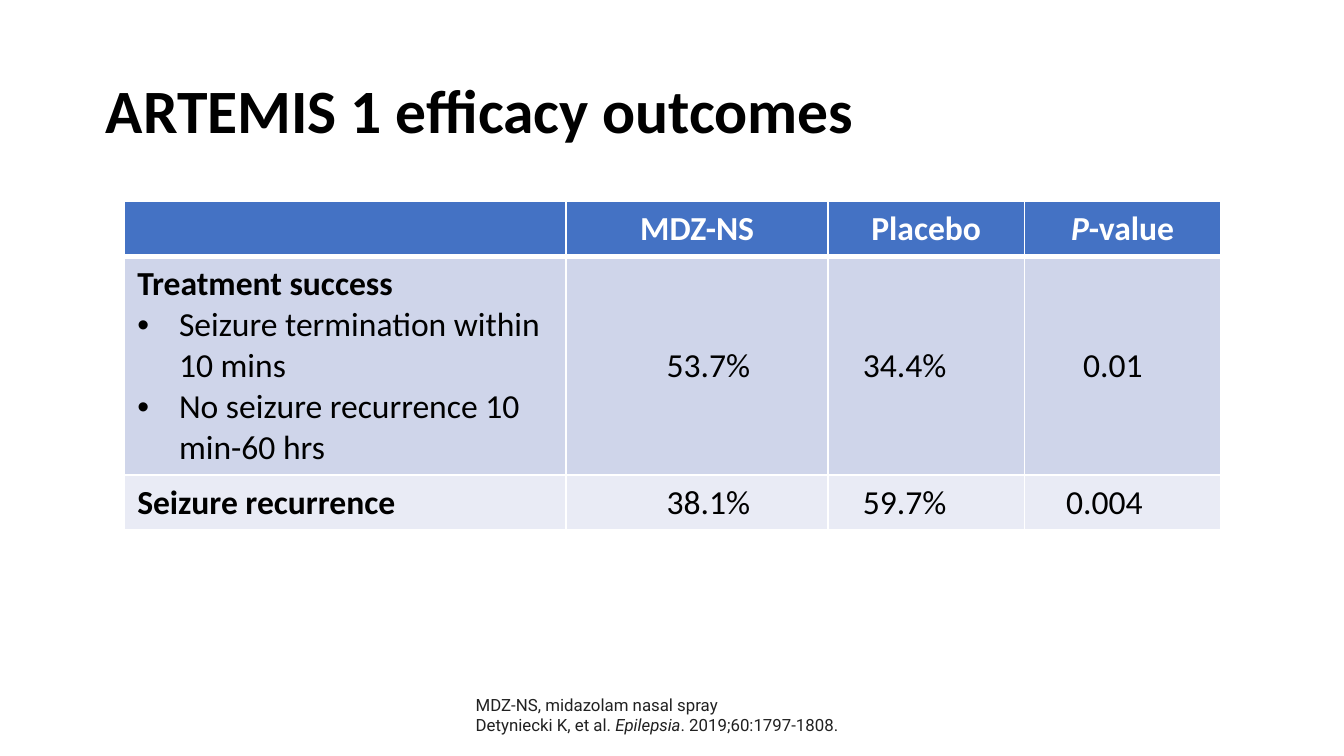
import pptx
import pptx.util
import pptx.dml.color
import pptx.enum.text
import pptx.oxml
import pptx.oxml.ns

Cm = pptx.util.Cm
Pt = pptx.util.Pt
ALIGN = pptx.enum.text.PP_ALIGN
ANCHOR = pptx.enum.text.MSO_ANCHOR

COLORS = {
    "black": "000000", "white": "FFFFFF", "note": "212121",
    "header": "4472C4", "band_dark": "CFD5EA", "band_light": "E9EBF5",
}
PLAIN = {"bold": False}
BOLD = {"bold": True}
ITALIC = {"italic": True}

TITLE = [[("ARTEMIS 1 efficacy outcomes", BOLD)]]
FOOTNOTE = [
    [("MDZ-NS, midazolam nasal spray", {})],
    [("Detyniecki K, et al. ", {}), ("Epilepsia", ITALIC), (". 2019;60:1797-1808.", {})],
]
HEADINGS = [
    [("MDZ-NS", {})],
    [("Placebo", {})],
    [("P", ITALIC), ("-value", {})],
]
OUTCOMES = [
    ("Treatment success",
     ["Seizure termination within 10 mins", "No seizure recurrence 10 min-60 hrs"],
     ["53.7%", "34.4%", "0.01"], "band_dark"),
    ("Seizure recurrence", [], ["38.1%", "59.7%", "0.004"], "band_light"),
]
LABEL_WIDTH = 8.36
VALUE_WIDTHS = [3.73, 2.49, 2.49]
PADDING_WIDTH = 1.22
ROW_HEIGHTS = [1.04, 4.13, 1.04]
BULLET_INDENT = Cm(0.79)


def write(frame, paragraphs, font, color, size, alignment=ALIGN.LEFT, **base):
    for index, runs in enumerate(paragraphs):
        paragraph = frame.paragraphs[0] if index == 0 else frame.add_paragraph()
        paragraph.alignment = alignment
        for text, changes in runs:
            run = paragraph.add_run()
            run.text = text
            run.font.color.rgb = pptx.dml.color.RGBColor.from_string(COLORS[color])
            values = {"name": font, "size": Pt(size), **base, **changes}
            for name, value in values.items():
                setattr(run.font, name, value)


def add_text(slide, box, anchor, paragraphs, **style):
    frame = slide.shapes.add_textbox(*map(Cm, box)).text_frame
    frame.word_wrap = True
    frame.vertical_anchor = anchor
    write(frame, paragraphs, **style)
    return frame


def add_bullet(paragraph):
    properties = paragraph._p.get_or_add_pPr()
    properties.set("marL", str(BULLET_INDENT))
    properties.set("indent", str(-BULLET_INDENT))
    namespace = pptx.oxml.ns.nsdecls("a")
    for xml in (f'<a:buFont {namespace} typeface="Arial"/>', f'<a:buChar {namespace} char="•"/>'):
        properties.append(pptx.oxml.parse_xml(xml))


def style_cell(cell, fill, bottom=1, open_side=None):
    cell.vertical_anchor = ANCHOR.MIDDLE
    cell.fill.solid()
    cell.fill.fore_color.rgb = pptx.dml.color.RGBColor.from_string(COLORS[fill])
    properties = cell._tc.get_or_add_tcPr()
    for index, side in enumerate("LRTB"):
        width = Pt(bottom if side == "B" else 1)
        paint = f'<a:solidFill><a:srgbClr val="{COLORS["white"]}"/></a:solidFill>'
        if side == open_side:
            paint = "<a:noFill/>"
        border = f'<a:ln{side} {pptx.oxml.ns.nsdecls("a")} w="{width}">{paint}</a:ln{side}>'
        properties.insert(index, pptx.oxml.parse_xml(border))


def add_outcome_table(slide):
    widths = [LABEL_WIDTH]
    for width in VALUE_WIDTHS:
        widths += [width, PADDING_WIDTH]
    table = slide.shapes.add_table(
        len(ROW_HEIGHTS), len(widths), Cm(2.34), Cm(3.81),
        Cm(sum(widths)), Cm(sum(ROW_HEIGHTS))).table
    for column, width in zip(table.columns, widths):
        column.width = Cm(width)
    for row, height in zip(table.rows, ROW_HEIGHTS):
        row.height = Cm(height)

    style = {"font": "Calibri", "size": 18}
    for cell in table.rows[0].cells:
        style_cell(cell, "header", bottom=3)
    for index, heading in enumerate(HEADINGS):
        cell = table.cell(0, 1 + 2 * index)
        cell.merge(table.cell(0, 2 + 2 * index))
        write(cell.text_frame, [heading], color="white", alignment=ALIGN.CENTER, bold=True, **style)

    for row, (label, details, values, band) in enumerate(OUTCOMES, start=1):
        cell = table.cell(row, 0)
        style_cell(cell, band)
        paragraphs = [[(label, BOLD)]] + [[(detail, PLAIN)] for detail in details]
        write(cell.text_frame, paragraphs, color="black", **style)
        for paragraph in cell.text_frame.paragraphs[1:]:
            add_bullet(paragraph)
        for index, value in enumerate(values):
            cell = table.cell(row, 1 + 2 * index)
            style_cell(cell, band, open_side="R")
            style_cell(table.cell(row, 2 + 2 * index), band, open_side="L")
            write(cell.text_frame, [[(value, PLAIN)]], color="black", alignment=ALIGN.RIGHT, **style)


def main():
    presentation = pptx.Presentation()
    presentation.slide_width = Cm(25.4)
    presentation.slide_height = Cm(14.29)
    slide = presentation.slides.add_slide(presentation.slide_layouts[6])
    title = add_text(slide, (1.75, 0.76, 21.9, 2.77), ANCHOR.MIDDLE, TITLE,
                     font="Calibri", color="black", size=33)
    title.paragraphs[0].line_spacing = 0.9
    add_outcome_table(slide)
    add_text(slide, (8.74, 12.6, 14.94, 1.42), ANCHOR.BOTTOM, FOOTNOTE,
             font="Roboto", color="note", size=9)
    presentation.save("out.pptx")


if __name__ == "__main__":
    main()
